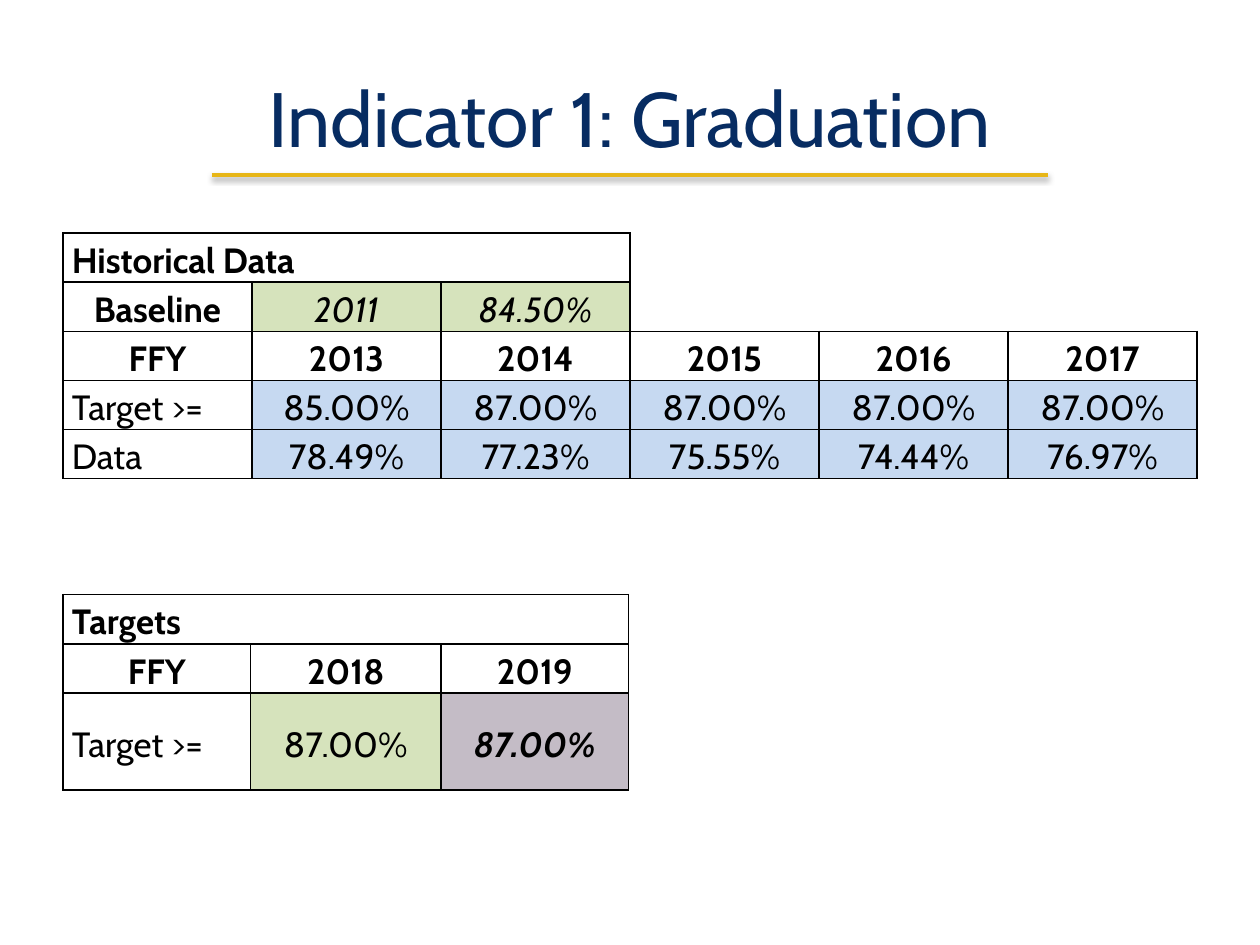
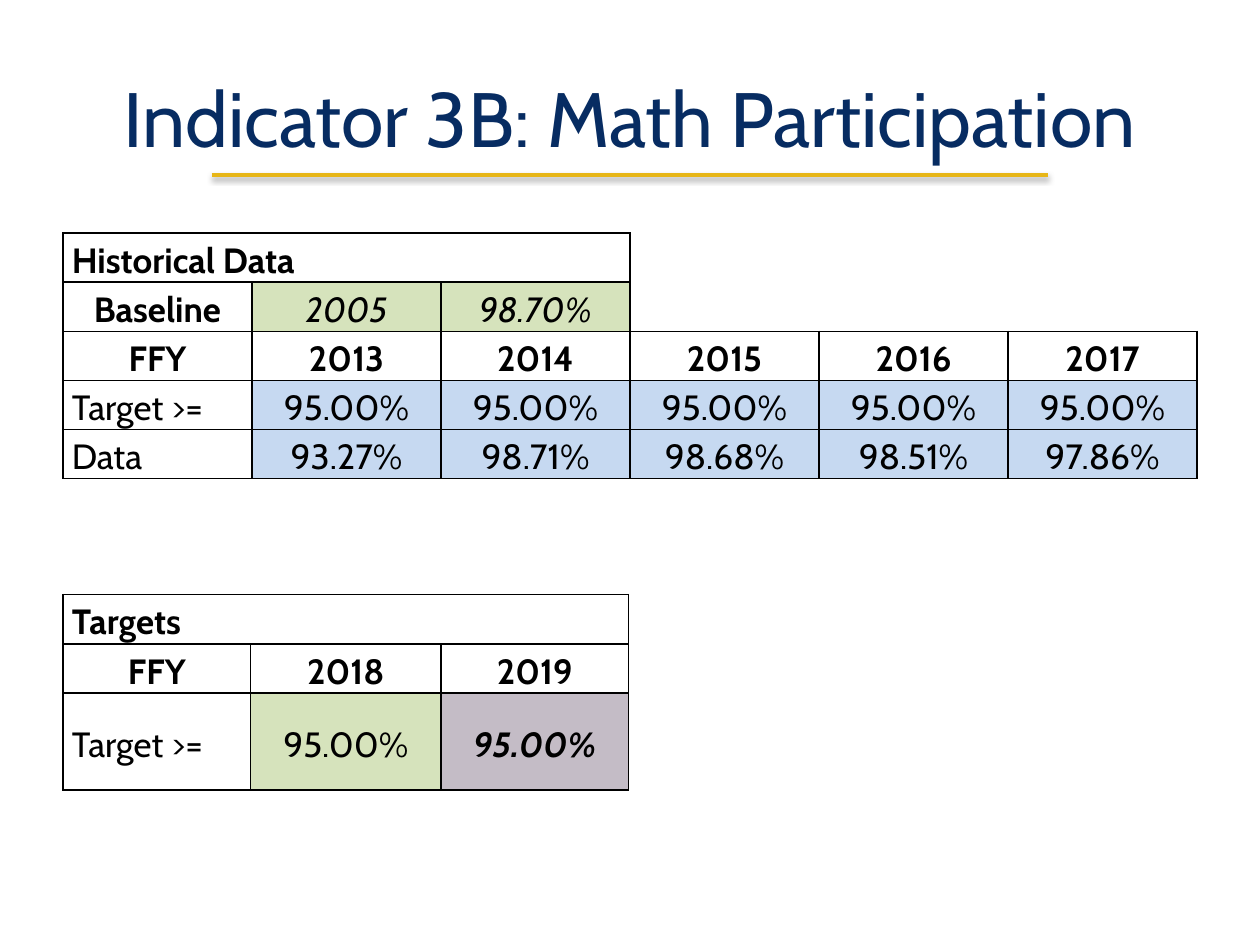
from lxml import etree
from pptx import Presentation
from pptx.dml.color import RGBColor
from pptx.enum.shapes import MSO_CONNECTOR
from pptx.enum.text import MSO_ANCHOR, PP_ALIGN
from pptx.oxml import parse_xml
from pptx.util import Inches, Pt

LEFT, MID = PP_ALIGN.LEFT, PP_ALIGN.CENTER
TOP, CENTER = MSO_ANCHOR.TOP, MSO_ANCHOR.MIDDLE
NS = "http://schemas.openxmlformats.org/drawingml/2006/main"
FONT = "Cabin"
HEX = {"navy": "072C62", "gold": "E7B617", "black": "000000",
       "green": "D6E3BC", "blue": "C6D9F1", "mauve": "C4BCC6"}
SHADE = f"""<a:effectLst xmlns:a="{NS}">
<a:outerShdw blurRad="{Pt(3.1)}" dist="{Pt(1.6)}" dir="5400000" rotWithShape="0">
<a:srgbClr val="{HEX['black']}"><a:alpha val="38000"/></a:srgbClr>
</a:outerShdw></a:effectLst>"""

YEARS = ["2013", "2014", "2015", "2016", "2017"]
PAGES = [
    {"title": "Indicator 1: Graduation",
     "base": ["2011", "84.50%"],
     "goals": ["85.00%", "87.00%", "87.00%", "87.00%", "87.00%"],
     "data": ["78.49%", "77.23%", "75.55%", "74.44%", "76.97%"],
     "next": ["87.00%", "87.00%"]},
    {"title": "Indicator 3B: Math Participation",
     "base": ["2005", "98.70%"],
     "goals": ["95.00%"] * 5,
     "data": ["93.27%", "98.71%", "98.68%", "98.51%", "97.86%"],
     "next": ["95.00%", "95.00%"]},
]


def write(frame, text, size=20, color="black", bold=False, italic=False,
          align=MID, space=1.15):
    para = frame.paragraphs[0]
    para.alignment = align
    para.line_spacing = space
    run = para.add_run()
    run.text = text
    font = run.font
    font.name, font.size = FONT, Pt(size)
    font.bold, font.italic = bold, italic
    font.color.rgb = RGBColor.from_string(HEX[color])


def grid(slide, top, widths, heights, rows):
    shape = slide.shapes.add_table(
        len(heights), len(widths), Inches(0.5), Inches(top),
        Inches(sum(widths)), Inches(sum(heights)))
    table = shape.table
    table.first_row = table.horz_banding = False
    for col, width in zip(table.columns, widths):
        col.width = Inches(width)
    for row, height in zip(table.rows, heights):
        row.height = Inches(height)
    for r in range(len(heights)):
        for c in range(len(widths)):
            cell = table.cell(r, c)
            void = r < 2 and c > 2
            cell.margin_left = cell.margin_right = Inches(0.07)
            cell.margin_top = cell.margin_bottom = 0
            props = cell._tc.get_or_add_tcPr()
            for side in "LRTB":
                edge = etree.SubElement(props, f"{{{NS}}}ln{side}", w=str(Pt(1)))
                if void and side in "RT":
                    etree.SubElement(edge, f"{{{NS}}}noFill")
                else:
                    fill = etree.SubElement(edge, f"{{{NS}}}solidFill")
                    etree.SubElement(fill, f"{{{NS}}}srgbClr", val=HEX["black"])
            cell.fill.background()
            if c >= len(rows[r][0]):
                continue
            texts, style = rows[r]
            look = dict(style[min(c, len(style) - 1)])
            tint = look.pop("tint", None)
            cell.vertical_anchor = look.pop("anchor", CENTER)
            if tint:
                cell.fill.solid()
                cell.fill.fore_color.rgb = RGBColor.from_string(HEX[tint])
            write(cell.text_frame, texts[c], **look)
    table.cell(0, 0).merge(table.cell(0, 2))
    if len(widths) > 3:
        table.cell(0, 3).merge(table.cell(1, len(widths) - 1))


head = {"bold": True}
name = {"bold": True, "align": LEFT}
label = {"align": LEFT}
high = {"align": LEFT, "anchor": TOP}
base = {"italic": True, "tint": "green"}
value = {"tint": "blue"}
near = {"tint": "green"}
last = {"bold": True, "italic": True, "tint": "mauve"}

deck = Presentation()
deck.slide_width, deck.slide_height = Inches(10), Inches(7.5)

for page in PAGES:
    slide = deck.slides.add_slide(deck.slide_layouts[6])

    rule = slide.shapes.add_connector(
        MSO_CONNECTOR.STRAIGHT, Inches(1.68), Inches(1.39), Inches(8.32), Inches(1.39))
    rule.line.color.rgb = RGBColor.from_string(HEX["gold"])
    rule.line.width = Pt(2)
    rule._element.spPr.append(parse_xml(SHADE))

    box = slide.shapes.add_textbox(Inches(0.5), Inches(0.3), Inches(9), Inches(1.25))
    box.text_frame.word_wrap = True
    box.text_frame.vertical_anchor = CENTER
    write(box.text_frame, page["title"], size=44, color="navy", space=1.0)

    grid(slide, 1.85, [1.5] * 6, [0.39] * 5, [
        (["Historical Data"], [name]),
        (["Baseline"] + page["base"], [head, base]),
        (["FFY"] + YEARS, [{"bold": True, "anchor": TOP}, head]),
        (["Target >="] + page["goals"], [high, value]),
        (["Data"] + page["data"], [high, value]),
    ])
    grid(slide, 4.72, [1.49, 1.51, 1.49], [0.39, 0.39, 0.77], [
        (["Targets"], [name]),
        (["FFY", "2018", "2019"], [head]),
        (["Target >="] + page["next"], [label, near, last]),
    ])

deck.save("out.pptx")
